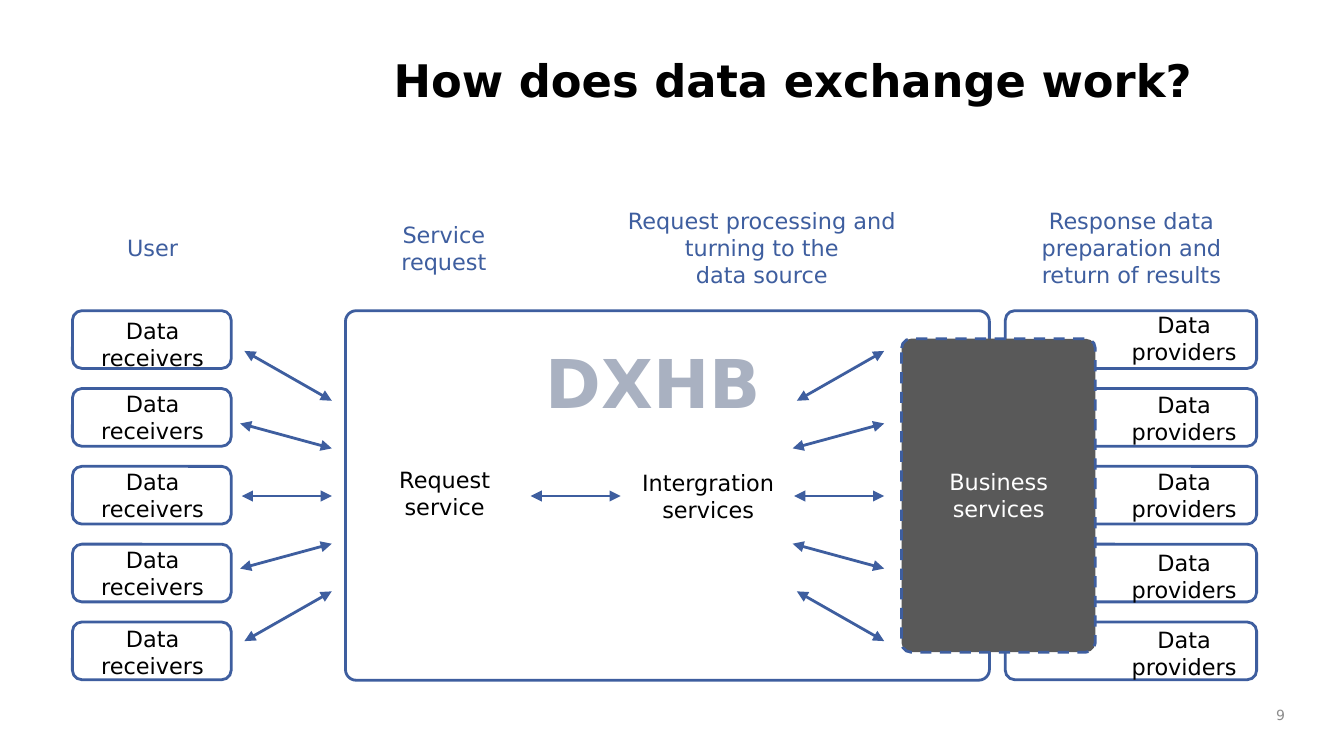
from lxml import etree
from pptx import Presentation
from pptx.dml.color import RGBColor
from pptx.enum.dml import MSO_LINE
from pptx.enum.shapes import MSO_CONNECTOR, MSO_SHAPE
from pptx.enum.text import MSO_ANCHOR, MSO_AUTO_SIZE, PP_ALIGN
from pptx.oxml.ns import qn
from pptx.util import Cm, Pt

ROUNDED = MSO_SHAPE.ROUNDED_RECTANGLE
STRAIGHT = MSO_CONNECTOR.STRAIGHT
DASH = MSO_LINE.DASH
LEFT, CENTER, RIGHT = PP_ALIGN.LEFT, PP_ALIGN.CENTER, PP_ALIGN.RIGHT
TOP, MIDDLE = MSO_ANCHOR.TOP, MSO_ANCHOR.MIDDLE
NO_FIT, GROW = MSO_AUTO_SIZE.NONE, MSO_AUTO_SIZE.SHAPE_TO_FIT_TEXT

BLUE = RGBColor(0x3E, 0x5E, 0x9F)
PALE = RGBColor(0xA9, 0xB1, 0xC1)
DARK = RGBColor(0x59, 0x59, 0x59)
GREY = RGBColor(0x8C, 0x8C, 0x8C)
BLACK = RGBColor(0, 0, 0)
WHITE = RGBColor(255, 255, 255)

FONT = "DejaVu Sans"

# Geometry in centimetres
ROW_TOP, ROW_STEP, ROW_HEIGHT = 5.87, 1.47, 1.09
AXIS_Y = 9.37
OUTER_STEP, INNER_STEP = 1.37, 0.9
ARROW_REACH = [1.65, 1.73, 1.7, 1.73, 1.65]
REQUEST_SIDE_X, BUSINESS_SIDE_X = 6.27, 16.71
RECEIVER_TEXT_DROP = [0.12, 0.03, 0.03, 0.04, 0.06]
PROVIDER_TEXT_DROP = [0, 0.05, 0.03, 0.1, 0.08]


def write(frame, text, size=12, color=BLACK, bold=False, align=CENTER,
          anchor=TOP, fit=GROW, margins=(0, 0, 0, 0)):
    """Fill a text frame, one paragraph per line; margins are left, top, right, bottom."""
    frame.text = text
    frame.word_wrap = True
    frame.auto_size = fit
    frame.vertical_anchor = anchor
    (frame.margin_left, frame.margin_top,
     frame.margin_right, frame.margin_bottom) = map(Cm, margins)
    for paragraph in frame.paragraphs:
        paragraph.alignment = align
        for run in paragraph.runs:
            run.font.name = FONT
            run.font.size = Pt(size)
            run.font.bold = bold
            run.font.color.rgb = color


class ExchangeSlide:
    def __init__(self, deck):
        self.slide = deck.slides.add_slide(deck.slide_layouts[5])
        self.shapes = self.slide.shapes
        self.line_color = BLUE
        self.line_width = Pt(1.5)

    def title(self, text, x, y, width, height):
        title = self.slide.shapes.title
        title.left, title.top, title.width, title.height = map(Cm, (x, y, width, height))
        write(title.text_frame, text, size=24, bold=True, align=LEFT,
              fit=NO_FIT, margins=(0.25, 0.2, 0.25, 0.13))

    def label(self, text, x, y, width, height, parent=None, **style):
        box = (parent or self.shapes).add_textbox(*map(Cm, (x, y, width, height)))
        write(box.text_frame, text, **style)

    def frame(self, x, y, width, height, corner=0.163, fill=None, dash=None, parent=None):
        frame = (parent or self.shapes).add_shape(ROUNDED, *map(Cm, (x, y, width, height)))
        frame.adjustments[0] = corner
        frame.shadow.inherit = False
        if fill is None:
            frame.fill.background()
        else:
            frame.fill.solid()
            frame.fill.fore_color.rgb = fill
        frame.line.color.rgb = self.line_color
        frame.line.width = self.line_width
        if dash is not None:
            frame.line.dash_style = dash

    def double_arrow(self, x1, y1, x2, y2):
        arrow = self.shapes.add_connector(STRAIGHT, *map(Cm, (x1, y1, x2, y2)))
        arrow.line.color.rgb = self.line_color
        arrow.line.width = self.line_width
        properties = arrow.element.spPr
        outline = properties.find(qn("a:ln"))
        for end in ("a:headEnd", "a:tailEnd"):
            etree.SubElement(outline, qn(end), type="triangle")
        etree.SubElement(properties, qn("a:effectLst"))

    def receiver(self, y, text_drop):
        group = self.shapes.add_group_shape().shapes
        self.label("Data receivers", 1.4, y + text_drop, 2.97, 0.51, parent=group)
        self.frame(1.37, y, 3, ROW_HEIGHT, parent=group)


def main():
    deck = Presentation()
    deck.slide_width, deck.slide_height = Cm(25.4), Cm(14.28)
    exchange = ExchangeSlide(deck)

    exchange.title("How does data exchange work?", 7.19, 0.79, 16.94, 2.24)
    exchange.label("9", 23.7, 13.18, 0.84, 0.64, size=7.5, color=GREY, align=RIGHT,
                   anchor=MIDDLE, fit=NO_FIT, margins=(0.25, 0.13, 0.25, 0.13))

    stages = [
        ("User", 1.83, 4.42, 2.11, 0.51),
        ("Service request", 6.83, 4.17, 3.12, 1.02),
        ("Request processing and turning to the\ndata source", 11.76, 3.91, 5.28, 1.55),
        ("Response data preparation and return of results", 19.2, 3.91, 4.37, 1.55),
    ]
    for stage in stages:
        exchange.label(*stage, color=BLUE)

    exchange.frame(6.53, ROW_TOP, 12.17, 6.98, corner=0.029)
    exchange.label("DXHB", 9.96, 6.45, 4.78, 1.55, size=36, color=PALE, bold=True)
    exchange.label("Request service", 6.78, 8.81, 3.25, 1.09)
    exchange.label("Intergration services", 11.76, 8.86, 3.25, 1.02)
    exchange.double_arrow(10.03, AXIS_Y, 11.73, AXIS_Y)

    row_tops = [ROW_TOP + row * ROW_STEP for row in range(5)]
    for row, reach in enumerate(ARROW_REACH):
        outer_y = AXIS_Y + (row - 2) * OUTER_STEP
        inner_y = AXIS_Y + (row - 2) * INNER_STEP
        exchange.receiver(row_tops[row], RECEIVER_TEXT_DROP[row])
        exchange.frame(19, row_tops[row], 4.75, ROW_HEIGHT)
        exchange.double_arrow(REQUEST_SIDE_X - reach, outer_y, REQUEST_SIDE_X, inner_y)
        exchange.double_arrow(BUSINESS_SIDE_X - reach, inner_y, BUSINESS_SIDE_X, outer_y)

    exchange.frame(17.04, 6.4, 3.66, 5.92, corner=0.048, fill=DARK, dash=DASH)
    exchange.label("Business services", 17.35, 8.84, 3.05, 1.04, color=WHITE)
    for y, text_drop in zip(row_tops, PROVIDER_TEXT_DROP):
        exchange.label("Data providers", 21.26, y + text_drop, 2.24, 1.02)

    deck.save("out.pptx")


if __name__ == "__main__":
    main()
